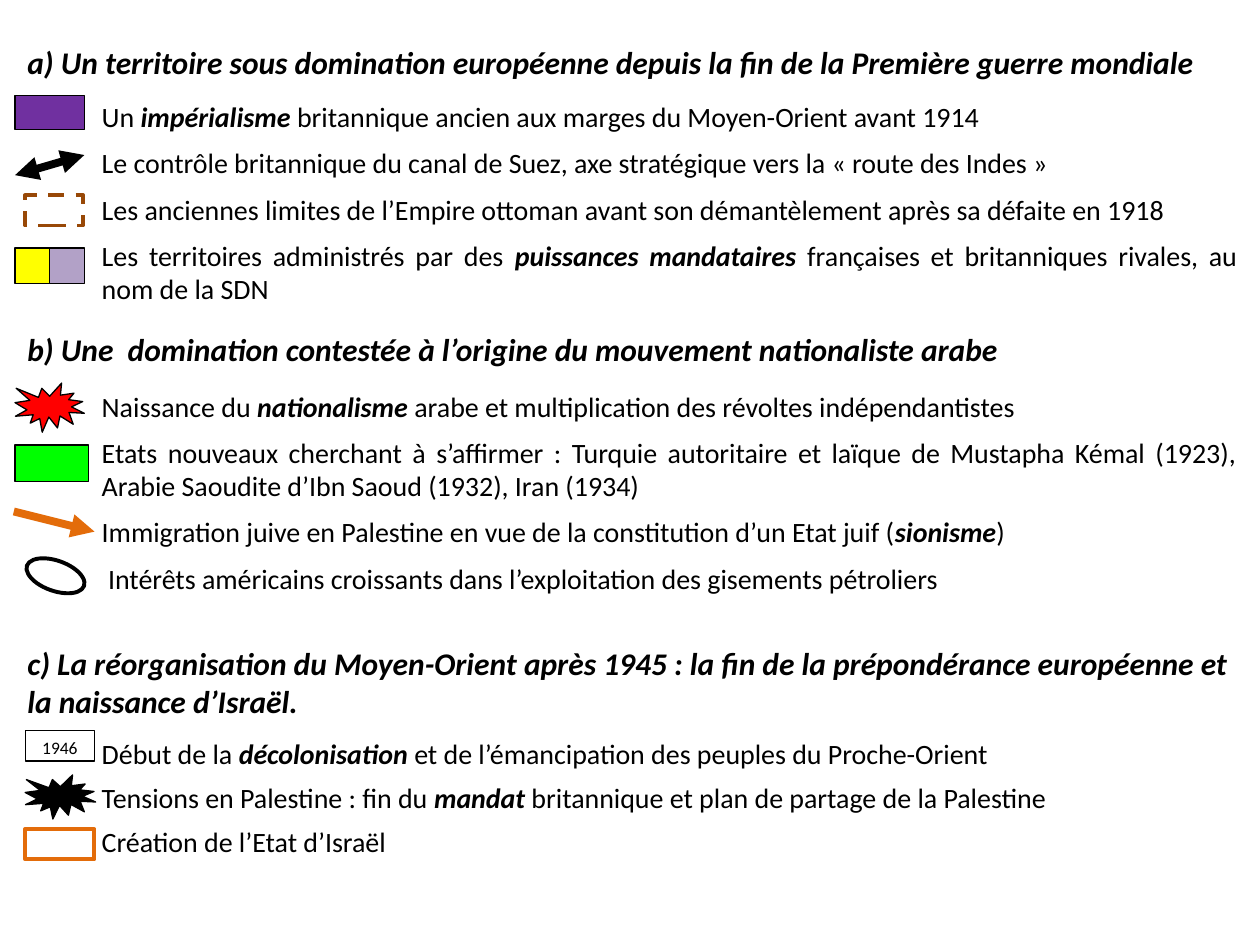
from dataclasses import dataclass
from typing import Optional

from lxml import etree
from pptx import Presentation
from pptx.dml.color import RGBColor
from pptx.enum import dml, shapes, text
from pptx.oxml import ns
from pptx.util import Pt

BLACK = RGBColor(0x00, 0x00, 0x00)
WHITE = RGBColor(0xFF, 0xFF, 0xFF)
PURPLE = RGBColor(0x70, 0x30, 0xA0)
LILAC = RGBColor(0xB2, 0xA1, 0xC7)
YELLOW = RGBColor(0xFF, 0xFF, 0x00)
RED = RGBColor(0xFF, 0x00, 0x00)
GREEN = RGBColor(0x00, 0xFF, 0x00)
BROWN = RGBColor(0x98, 0x48, 0x07)
ORANGE = RGBColor(0xE3, 0x6C, 0x0A)

FONT = "Calibri"
SECTION_LEFT, SECTION_WIDTH, ENTRY_INDENT = 8.6, 705.6, 42.5
RECTANGLE = shapes.MSO_SHAPE.RECTANGLE
BURST = shapes.MSO_SHAPE.EXPLOSION1
JUSTIFY, LEFT = text.PP_ALIGN.JUSTIFY, text.PP_ALIGN.LEFT


@dataclass
class Section:
    top: float
    height: float
    heading: str
    entries: list[str]  # asterisks enclose key terms
    first_gap: float
    gap: float
    heading_align: text.PP_ALIGN = LEFT
    entry_align: text.PP_ALIGN = JUSTIFY


@dataclass
class Symbol:
    left: float
    top: float
    width: float
    height: float
    fill: Optional[RGBColor]
    kind: shapes.MSO_SHAPE = RECTANGLE
    line: RGBColor = BLACK
    weight: float = 0.75
    dashed: bool = False
    rotation: float = 0
    label: str = ""


@dataclass
class Arrow:
    start: tuple[float, float]
    end: tuple[float, float]
    color: RGBColor
    heads: tuple[str, ...] = ("tailEnd",)


SECTIONS = [
    Section(20.9, 158.4,
            "a) Un territoire sous domination européenne depuis la fin de la Première guerre mondiale",
            ["Un *impérialisme* britannique ancien aux marges du Moyen-Orient avant 1914",
             "Le contrôle britannique du canal de Suez, axe stratégique vers la « route des Indes »",
             "Les anciennes limites de l’Empire ottoman avant son démantèlement après sa défaite en 1918",
             "Les territoires administrés par des *puissances mandataires *françaises et britanniques "
             "rivales, au nom de la SDN"],
            11, 7.2, heading_align=JUSTIFY),
    Section(185, 159.8,
            "b) Une  domination contestée à l’origine du mouvement nationaliste arabe",
            ["Naissance du *nationalisme* arabe et multiplication des révoltes indépendantistes",
             "Etats nouveaux cherchant à s’affirmer : Turquie autoritaire et laïque de Mustapha Kémal "
             "(1923), Arabie Saoudite d’Ibn Saoud (1932), Iran (1934)",
             "Immigration juive en Palestine en vue de la constitution d’un Etat juif (*sionisme*)",
             " Intérêts américains croissants dans l’exploitation des gisements pétroliers"],
            12.2, 7.2),
    Section(364.3, 154.8,
            "c) La réorganisation du Moyen-Orient après 1945 : la fin de la prépondérance européenne "
            "et la naissance d’Israël.",
            ["Début de la *décolonisation* et de l’émancipation des peuples du Proche-Orient",
             "Tensions en Palestine : fin du *mandat* britannique et plan de partage de la Palestine",
             "Création de l’Etat d’Israël"],
            9.8, 6, entry_align=LEFT),
]

SYMBOLS = [
    Symbol(8.6, 54.7, 39.6, 19.4, PURPLE),
    Symbol(14.4, 111.6, 33.1, 17.3, WHITE, line=BROWN, weight=2.25, dashed=True),
    Symbol(8.6, 218.9, 39.6, 28.1, RED, BURST),
    Symbol(14.4, 320.4, 34.6, 17.3, None, shapes.MSO_SHAPE.OVAL, weight=2.25, rotation=19.6),
    Symbol(8.6, 254.2, 41.8, 20.9, GREEN),
    Symbol(14.4, 417.6, 39.6, 17.3, WHITE, label="1946"),
    Symbol(14.4, 442.8, 40.3, 25.2, BLACK, BURST),
    Symbol(14.4, 473.8, 39.6, 17.3, WHITE, line=ORANGE, weight=2.25),
]
MANDATES = [Symbol(8.6, 141.8, 19.8, 20.2, YELLOW),
            Symbol(28.4, 141.8, 19.8, 20.2, LILAC)]

ARROWS = [
    Arrow((8.6, 100.1), (48.2, 88.6), BLACK, ("headEnd", "tailEnd")),
    Arrow((7.9, 292.3), (54, 303.8), ORANGE),
]


def add_run(paragraph, words: str, size: float, emphasis: bool = False) -> None:
    run = paragraph.add_run()
    run.text = words
    font_format = {"name": FONT, "size": Pt(size), "bold": emphasis, "italic": emphasis}
    for name, value in font_format.items():
        setattr(run.font, name, value)
    run.font.color.rgb = BLACK


def add_section(slide, section: Section) -> None:
    box = slide.shapes.add_textbox(Pt(SECTION_LEFT), Pt(section.top),
                                   Pt(SECTION_WIDTH), Pt(section.height))
    frame = box.text_frame
    frame.word_wrap = True
    frame.auto_size = text.MSO_AUTO_SIZE.SHAPE_TO_FIT_TEXT
    heading = frame.paragraphs[0]
    heading.alignment = section.heading_align
    add_run(heading, section.heading, 18, emphasis=True)

    for index, entry in enumerate(section.entries):
        paragraph = frame.add_paragraph()
        properties = paragraph._p.get_or_add_pPr()
        properties.set("marL", str(Pt(ENTRY_INDENT)))
        properties.set("indent", "0")
        paragraph.alignment = section.entry_align
        paragraph.space_before = Pt(section.gap if index else section.first_gap)
        for part, words in enumerate(entry.split("*")):
            if words:
                add_run(paragraph, words, 16, emphasis=part % 2 == 1)


def add_symbol(container, symbol: Symbol) -> None:
    shape = container.add_shape(symbol.kind, Pt(symbol.left), Pt(symbol.top),
                                Pt(symbol.width), Pt(symbol.height))
    shape.shadow.inherit = False
    shape.rotation = symbol.rotation
    if symbol.fill is None:
        shape.fill.background()
    else:
        shape.fill.solid()
        shape.fill.fore_color.rgb = symbol.fill
    shape.line.color.rgb = symbol.line
    shape.line.width = Pt(symbol.weight)
    if symbol.dashed:
        shape.line.dash_style = dml.MSO_LINE.DASH
    if symbol.label:
        shape.text_frame.vertical_anchor = text.MSO_ANCHOR.TOP
        paragraph = shape.text_frame.paragraphs[0]
        paragraph.alignment = text.PP_ALIGN.CENTER
        paragraph.space_after = Pt(10)
        add_run(paragraph, symbol.label, 10)


def add_arrow(slide, arrow: Arrow) -> None:
    points = [Pt(value) for value in arrow.start + arrow.end]
    connector = slide.shapes.add_connector(shapes.MSO_CONNECTOR.STRAIGHT, *points)
    connector.line.color.rgb = arrow.color
    connector.line.width = Pt(4.5)
    line = connector.line._get_or_add_ln()
    for head in arrow.heads:
        etree.SubElement(line, ns.qn(f"a:{head}"), type="triangle")
    etree.SubElement(connector._element.spPr, ns.qn("a:effectLst"))


def main() -> None:
    presentation = Presentation()
    presentation.slide_width, presentation.slide_height = Pt(720), Pt(540)
    slide = presentation.slides.add_slide(presentation.slide_layouts[6])

    # Legend text
    for section in SECTIONS:
        add_section(slide, section)

    # Legend symbols
    for symbol in SYMBOLS:
        add_symbol(slide.shapes, symbol)
    mandate_group = slide.shapes.add_group_shape()
    for symbol in MANDATES:
        add_symbol(mandate_group.shapes, symbol)
    for arrow in ARROWS:
        add_arrow(slide, arrow)

    presentation.save("out.pptx")


if __name__ == "__main__":
    main()
